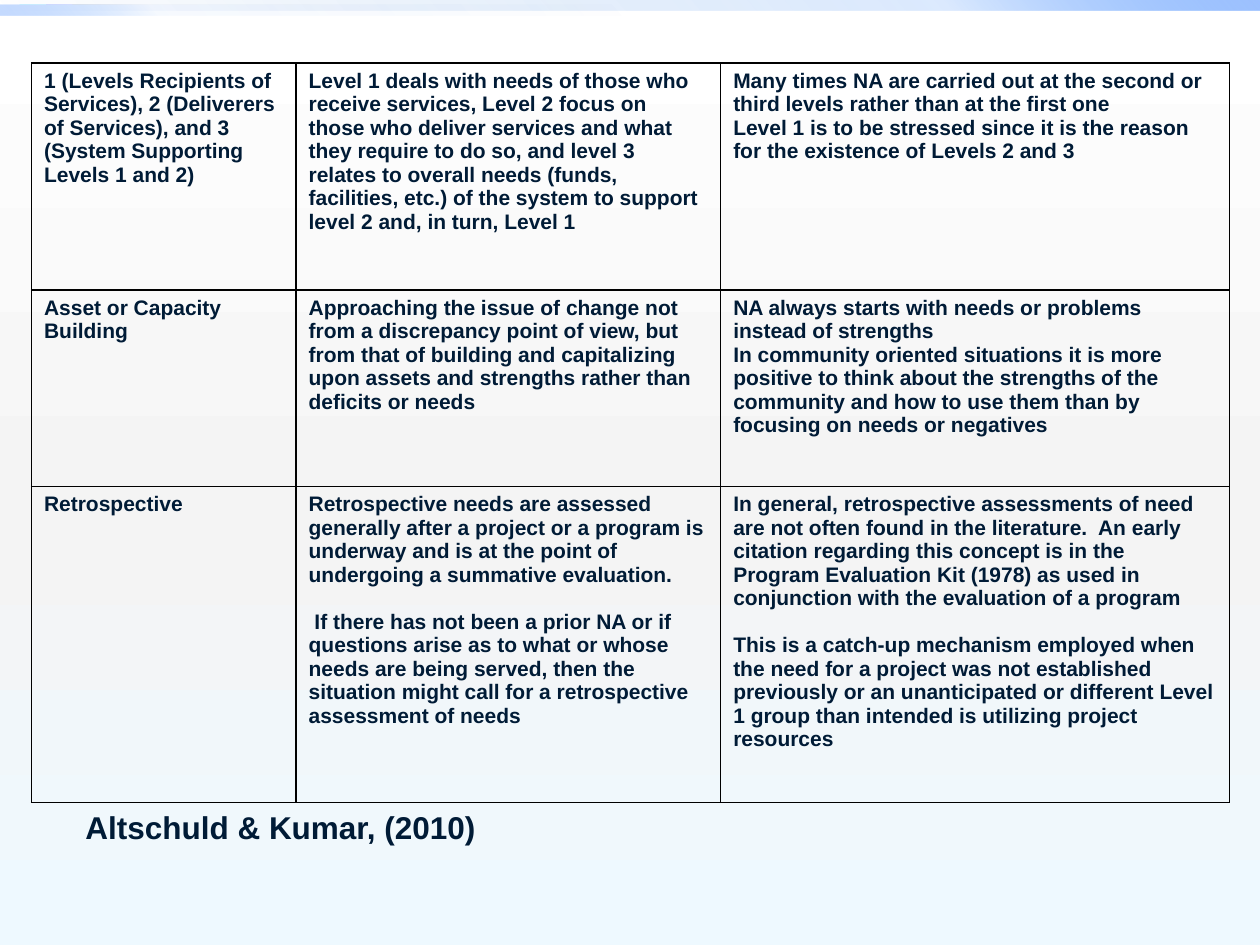
from lxml.etree import SubElement
from pptx import Presentation
from pptx.dml.color import RGBColor
from pptx.enum.shapes import MSO_SHAPE
from pptx.enum.text import MSO_ANCHOR, MSO_AUTO_SIZE
from pptx.oxml import parse_xml
from pptx.oxml.ns import nsdecls, qn
from pptx.util import Inches, Pt

COLORS = {
    "text": "001B36", "border": "000000",
    "white": "FFFFFF", "grey": "F4F4F4", "ice": "EEF9FF",
    "deep": "0058B7", "mid": "4F95FF", "pale": "9EC2FF",
}


def set_gradient(fill, element, angle, stops):
    """Fill with stops of (position %, colour name, opacity %)."""
    fill.gradient()
    fill.gradient_angle = angle
    stop_list = element.find(".//" + qn("a:gsLst"))
    for old_stop in list(stop_list):
        stop_list.remove(old_stop)
    for position, color, opacity in stops:
        stop = SubElement(stop_list, qn("a:gs"), pos=str(position * 1000))
        rgb = SubElement(stop, qn("a:srgbClr"), val=COLORS[color])
        if opacity < 100:
            SubElement(rgb, qn("a:alpha"), val=str(opacity * 1000))


def format_font(paragraph, size):
    values = {"name": "Arial", "size": Pt(size), "bold": True}
    for attribute, value in values.items():
        setattr(paragraph.font, attribute, value)
    paragraph.font.color.rgb = RGBColor.from_string(COLORS["text"])


prs = Presentation()
prs.slide_width = Inches(10)
prs.slide_height = Inches(7.5)
slide = prs.slides.add_slide(prs.slide_layouts[6])

set_gradient(slide.background.fill, slide.element, 270,
             [(0, "white", 100), (55, "grey", 100), (100, "ice", 100)])

# Bands along the top: top, width, angle, opacity of each stop
bands = [(0, 10, 45, (0, 20, 100)), (0.04, 5, 225, (0, 5, 60))]
for top, width, angle, opacities in bands:
    band = slide.shapes.add_shape(
        MSO_SHAPE.RECTANGLE, 0, Inches(top), Inches(width), Inches(0.08))
    band.shadow.inherit = False
    band.line.fill.background()
    set_gradient(band.fill, band.element, angle,
                 zip((0, 75, 100), ("deep", "mid", "pale"), opacities))

# Each cell is a list of (text, space before in points)
LINE_GAP = 13.5
approaches = [
    [
        [("1 (Levels Recipients of Services), 2 (Deliverers of Services), and 3 "
          "(System Supporting Levels 1 and 2)", 0)],
        [("Level 1 deals with needs of those who receive services, Level 2 focus on "
          "those who deliver services and what they require to do so, and level 3 "
          "relates to overall needs (funds, facilities, etc.) of the system to support "
          "level 2 and, in turn, Level 1", 0)],
        [("Many times NA are carried out at the second or third levels rather than at "
          "the first one", 0),
         ("Level 1 is to be stressed since it is the reason for the existence of "
          "Levels 2 and 3", 0)],
    ],
    [
        [("Asset or Capacity Building", 0)],
        [("Approaching the issue of change not from a discrepancy point of view, but "
          "from that of building and capitalizing upon assets and strengths rather "
          "than deficits or needs", 0)],
        [("NA always starts with needs or problems instead of strengths", 0),
         ("In community oriented situations it is more positive to think about the "
          "strengths of the community and how to use them than by focusing on needs "
          "or negatives", 0)],
    ],
    [
        [("Retrospective", 0)],
        [("Retrospective needs are assessed generally after a project or a program is "
          "underway and is at the point of undergoing a summative evaluation.", 0),
         (" If there has not been a prior NA or if questions arise as to what or whose "
          "needs are being served, then the situation might call for a retrospective "
          "assessment of needs", LINE_GAP)],
        [("In general, retrospective assessments of need are not often found in the "
          "literature.  An early citation regarding this concept is in the Program "
          "Evaluation Kit (1978) as used in conjunction with the evaluation of a "
          "program", 0),
         ("This is a catch-up mechanism employed when the need for a project was not "
          "established previously or an unanticipated or different Level 1 group than "
          "intended is utilizing project resources", LINE_GAP)],
    ],
]
column_widths = [2.1, 3.37, 4.04]
row_heights = [1.8, 1.56, 2.51]

table = slide.shapes.add_table(
    len(row_heights), len(column_widths), Inches(0.25), Inches(0.5),
    Inches(sum(column_widths)), Inches(sum(row_heights))).table
table.first_row = False
table.horz_banding = False
for column, width in zip(table.columns, column_widths):
    column.width = Inches(width)
for row, height in zip(table.rows, row_heights):
    row.height = Inches(height)

for row, approach in zip(table.rows, approaches):
    for cell, passages in zip(row.cells, approach):
        cell.fill.background()
        cell_properties = cell._tc.get_or_add_tcPr()
        for index, side in enumerate("LRTB"):
            cell_properties.insert(index, parse_xml(
                f'<a:ln{side} {nsdecls("a")} w="{Pt(1)}"><a:solidFill>'
                f'<a:srgbClr val="{COLORS["border"]}"/></a:solidFill></a:ln{side}>'))
        cell.text_frame.text = "\n".join(text for text, _ in passages)
        for paragraph, (_, gap) in zip(cell.text_frame.paragraphs, passages):
            if gap:
                paragraph.space_before = Pt(gap)
            format_font(paragraph, 12)

citation = slide.shapes.add_textbox(
    Inches(0.58), Inches(6.36), Inches(5.25), Inches(0.4)).text_frame
citation.word_wrap = True
citation.auto_size = MSO_AUTO_SIZE.SHAPE_TO_FIT_TEXT
citation.vertical_anchor = MSO_ANCHOR.MIDDLE
citation.text = "Altschuld & Kumar, (2010)"
format_font(citation.paragraphs[0], 18)

prs.save("out.pptx")
